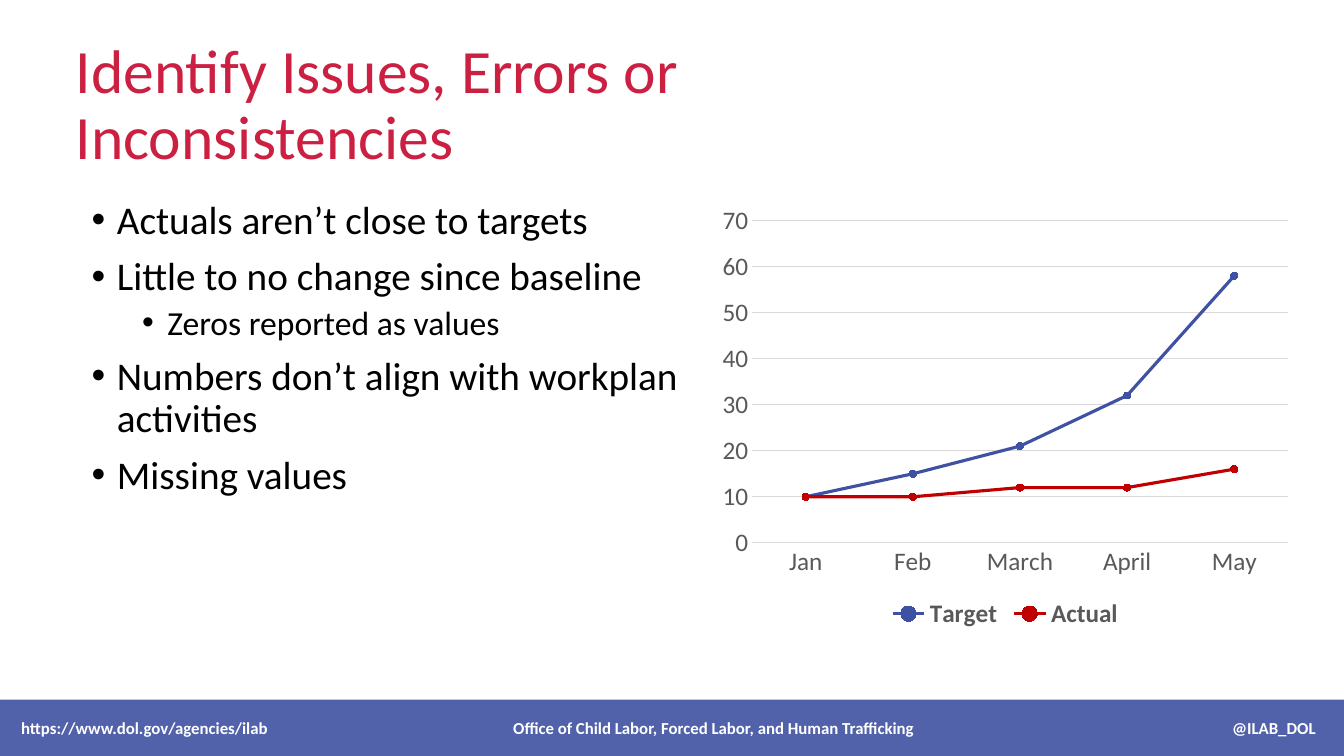
"""Build the slide on issues, errors and inconsistencies in reported data."""
from dataclasses import dataclass

from pptx import Presentation
from pptx.chart import data as cdata
from pptx.dml.color import RGBColor
from pptx.enum import chart as ch, shapes, text
from pptx.oxml import ns, xmlchemy
from pptx.util import Inches, Pt


@dataclass(frozen=True)
class Theme:
    font: str = "Calibri"
    blue: str = "3F51A2"
    rose: str = "CB2042"
    red: str = "C00000"
    black: str = "000000"
    white: str = "FFFFFF"
    gray: str = "595959"
    rule: str = "D9D9D9"
    head: int = 44
    levels: tuple = (28, 24)
    axis: int = 18
    foot: int = 12


T = Theme()
TITLE = "Identify Issues, Errors or Inconsistencies"
POINTS = [
    (0, "Actuals aren’t close to targets"),
    (0, "Little to no change since baseline"),
    (1, "Zeros reported as values"),
    (0, "Numbers don’t align with workplan activities"),
    (0, "Missing values"),
]
FOOTER = [
    "https://www.dol.gov/agencies/ilab",
    "Office of Child Labor, Forced Labor, and Human Trafficking",
    "@ILAB_DOL",
]
TABS = [("ctr", 6.87), ("r", 12.84)]
MONTHS = ["Jan", "Feb", "March", "April", "May"]
SERIES = [
    ("Target", (10, 15, 21, 32, 58), T.blue),
    ("Actual", (10, 10, 12, 12, 16), T.red),
]


def rgb(code):
    """Turn a hex code into a colour."""
    return RGBColor.from_string(code)


def style(font, size, color, bold=False):
    """Set the face, size, colour and weight of a font."""
    font.name, font.size, font.bold = T.font, Pt(size), bold
    font.color.rgb = rgb(color)


def write(para, words, size, color, bold=False, space=0, line=1.0):
    """Fill a paragraph with one formatted, left-aligned run."""
    run = para.add_run()
    run.text = words
    style(run.font, size, color, bold)
    para.alignment = text.PP_ALIGN.LEFT
    para.space_before, para.line_spacing = Pt(space), line


def node(parent, tag, **attrs):
    """Append a drawing element with attributes."""
    item = xmlchemy.OxmlElement(tag)
    for key, value in attrs.items():
        item.set(key, str(value))
    parent.append(item)
    return item


def place(shape, left, top, width, height):
    """Move and size a shape, in inches."""
    shape.left, shape.top = Inches(left), Inches(top)
    shape.width, shape.height = Inches(width), Inches(height)


def add_title(slide):
    """Write the title."""
    title = slide.shapes.title
    place(title, 0.65, 0.41, 10.06, 1.29)
    frame = title.text_frame
    frame.auto_size = text.MSO_AUTO_SIZE.NONE
    frame.vertical_anchor = text.MSO_ANCHOR.MIDDLE
    write(frame.paragraphs[0], TITLE, T.head, T.rose, line=0.9)


def add_points(slide):
    """Write the bulleted list."""
    body = slide.placeholders[1]
    place(body, 0.81, 1.94, 6.5, 4.13)
    frame = body.text_frame
    frame.auto_size = text.MSO_AUTO_SIZE.NONE
    for i, (level, words) in enumerate(POINTS):
        para = frame.add_paragraph() if i else frame.paragraphs[0]
        para.level = level
        write(para, words, T.levels[level], T.black, space=10 - 5 * level, line=0.9)
        props = para._p.get_or_add_pPr()
        props.set("marL", str(Inches(0.25 + 0.5 * level)))
        props.set("indent", str(Inches(-0.25)))
        node(props, "a:buFont", typeface="Arial")
        node(props, "a:buChar", char="•")


def add_footer(slide):
    """Draw the bar with tabbed text along the bottom."""
    bar = slide.shapes.add_shape(shapes.MSO_SHAPE.RECTANGLE, 0, Inches(6.94),
                                 Inches(13.37), Inches(0.56))
    bar.shadow.inherit = False
    bar.fill.solid()
    bar.fill.fore_color.rgb = rgb(T.blue)
    bar.line.fill.background()
    shade = bar._element.spPr.find(".//" + ns.qn("a:srgbClr"))
    node(shade, "a:alpha", val=90000)
    frame = bar.text_frame
    frame.margin_left = Inches(0.21)
    frame.vertical_anchor = text.MSO_ANCHOR.MIDDLE
    para = frame.paragraphs[0]
    write(para, "\t".join(FOOTER), T.foot, T.white, bold=True)
    stops = node(para._p.get_or_add_pPr(), "a:tabLst")
    for align, pos in TABS:
        node(stops, "a:tab", pos=Inches(pos), algn=align)


def add_plot(slide):
    """Draw the line chart of targets and actuals."""
    data = cdata.CategoryChartData()
    data.categories = MONTHS
    for name, values, _ in SERIES:
        data.add_series(name, values)
    plot = slide.shapes.add_chart(
        ch.XL_CHART_TYPE.LINE_MARKERS, Inches(7.05), Inches(1.95),
        Inches(5.84), Inches(4.34), data).chart
    style(plot.font, T.axis, T.black)
    plot.has_title = False
    plot.has_legend = True
    plot.legend.position = ch.XL_LEGEND_POSITION.BOTTOM
    plot.legend.include_in_layout = False
    style(plot.legend.font, T.axis, T.gray, bold=True)
    cats, vals = plot.category_axis, plot.value_axis
    for axis in (cats, vals):
        axis.major_tick_mark = axis.minor_tick_mark = ch.XL_TICK_MARK.NONE
        style(axis.tick_labels.font, T.axis, T.gray)
    vals.minimum_scale, vals.maximum_scale, vals.major_unit = 0, 70, 10
    vals.format.line.fill.background()
    for line in (cats.format.line, vals.major_gridlines.format.line):
        line.color.rgb, line.width = rgb(T.rule), Pt(0.75)
    plot.plots[0].vary_by_categories = False
    for line, (_, _, color) in zip(plot.plots[0].series, SERIES):
        line.smooth = False
        line.format.line.color.rgb, line.format.line.width = rgb(color), Pt(2.25)
        mark = line.marker
        mark.style, mark.size = ch.XL_MARKER_STYLE.CIRCLE, 5
        mark.format.fill.solid()
        mark.format.fill.fore_color.rgb = rgb(color)
        mark.format.line.color.rgb = rgb(color)


def main():
    """Build and save the slide."""
    deck = Presentation()
    deck.slide_width, deck.slide_height = Inches(13.33), Inches(7.5)
    slide = deck.slides.add_slide(deck.slide_layouts[1])
    for part in (add_footer, add_title, add_points, add_plot):
        part(slide)
    deck.save("out.pptx")


if __name__ == "__main__":
    main()
